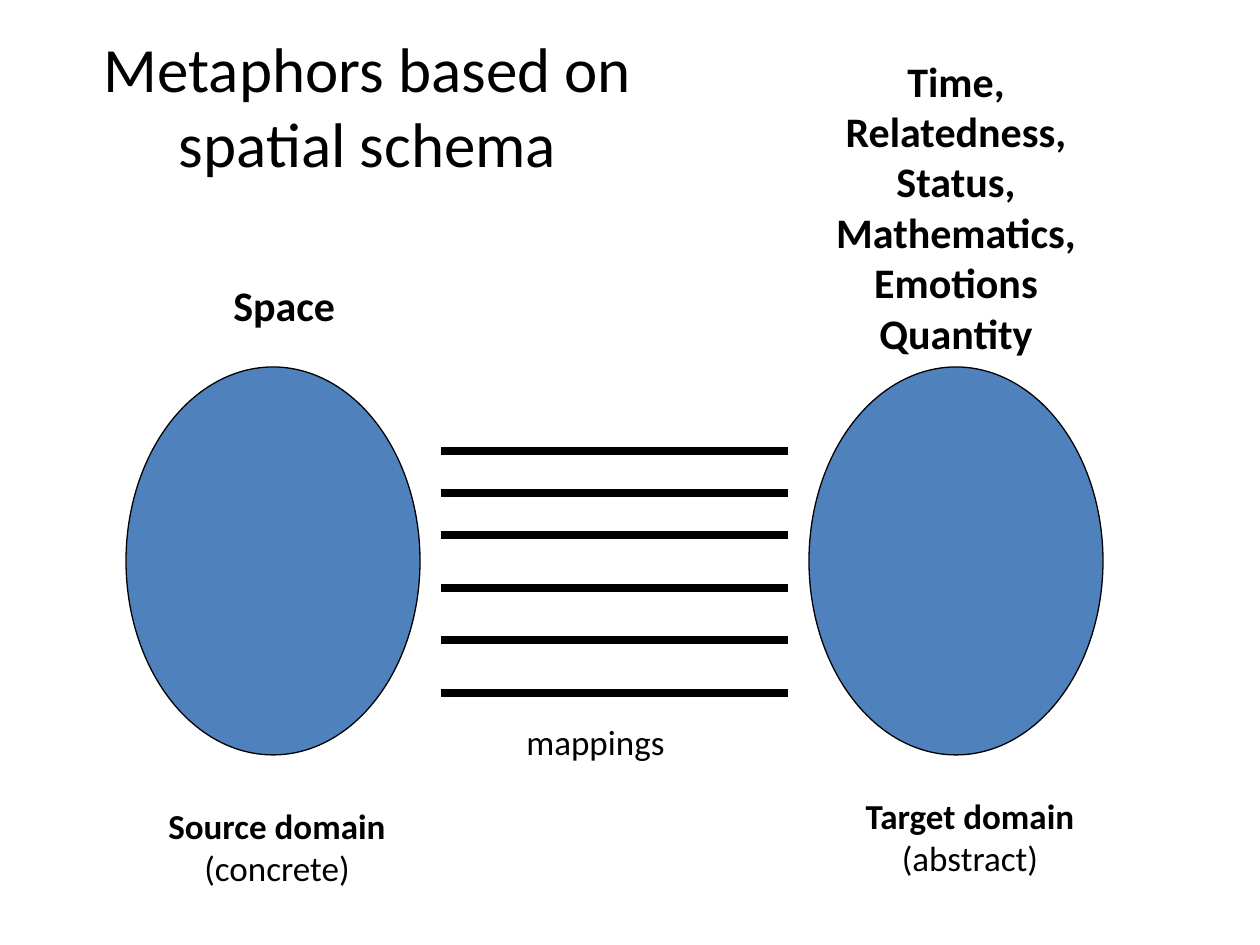
"""Build the slide on metaphors based on spatial schema."""
from lxml import etree
from pptx import Presentation
from pptx import util as u
from pptx.dml.color import RGBColor
from pptx.enum import shapes, text
from pptx.oxml import ns

PX = u.Inches(1) // 126


def color(value):
    return RGBColor.from_string(value)


def write(box, lines, size=20, bold_lines=0, align=text.PP_ALIGN.CENTER,
          anchor=text.MSO_ANCHOR.TOP, wrap=True, fit=text.MSO_AUTO_SIZE.SHAPE_TO_FIT_TEXT):
    frame = box.text_frame
    frame.text = lines
    frame.word_wrap = wrap
    frame.auto_size = fit
    frame.vertical_anchor = anchor
    for index, para in enumerate(frame.paragraphs):
        para.alignment = align
        span = para.runs[0]
        span.font.name = "Calibri"
        span.font.size = u.Pt(size)
        span.font.bold = index < bold_lines
        span.font.color.rgb = color("000000")


deck = Presentation()
deck.slide_width, deck.slide_height = u.Inches(10), u.Inches(7.5)
page = deck.slides.add_slide(deck.slide_layouts[5])

title = page.shapes.title
title.left, title.top, title.width, title.height = 63 * PX, 21 * PX, 609 * PX, 168 * PX
write(title, "Metaphors based on spatial schema", size=36,
      anchor=text.MSO_ANCHOR.MIDDLE, fit=text.MSO_AUTO_SIZE.NONE)

for left in (126, 809):
    domain = page.shapes.add_shape(
        shapes.MSO_SHAPE.OVAL, left * PX, 367 * PX, 294 * PX, 388 * PX)
    domain.shadow.inherit = False
    domain.fill.solid()
    domain.fill.fore_color.rgb = color("4F81BD")
    domain.line.color.rgb = color("000000")
    domain.line.width = u.Pt(0.75)

for y in (451, 493, 535, 588, 640, 693):
    mapping = page.shapes.add_connector(
        shapes.MSO_CONNECTOR.STRAIGHT, 441 * PX, y * PX, 788 * PX, y * PX)
    mapping.line.color.rgb = color("000000")
    mapping.line.width = u.Pt(4.5)
    etree.SubElement(mapping._element.spPr, ns.qn("a:effectLst"))

labels = [
    ("Target domain\n(abstract)", (852, 788, 236, 97), dict(bold_lines=1, wrap=False)),
    ("Source domain\n(concrete)", (155, 798, 244, 97), dict(bold_lines=1, wrap=False)),
    ("mappings", (514, 714, 165, 55), dict(align=text.PP_ALIGN.LEFT, wrap=False)),
    ("Space", (221, 273, 151, 64), dict(size=24, bold_lines=1, align=text.PP_ALIGN.LEFT)),
    ("Time,\nRelatedness,\nStatus,\nMathematics,\nEmotions\nQuantity",
     (788, 49, 336, 318), dict(size=24, bold_lines=6)),
]
for words, place, style in labels:
    label = page.shapes.add_textbox(*(length * PX for length in place))
    write(label, words, **style)

deck.save("out.pptx")
